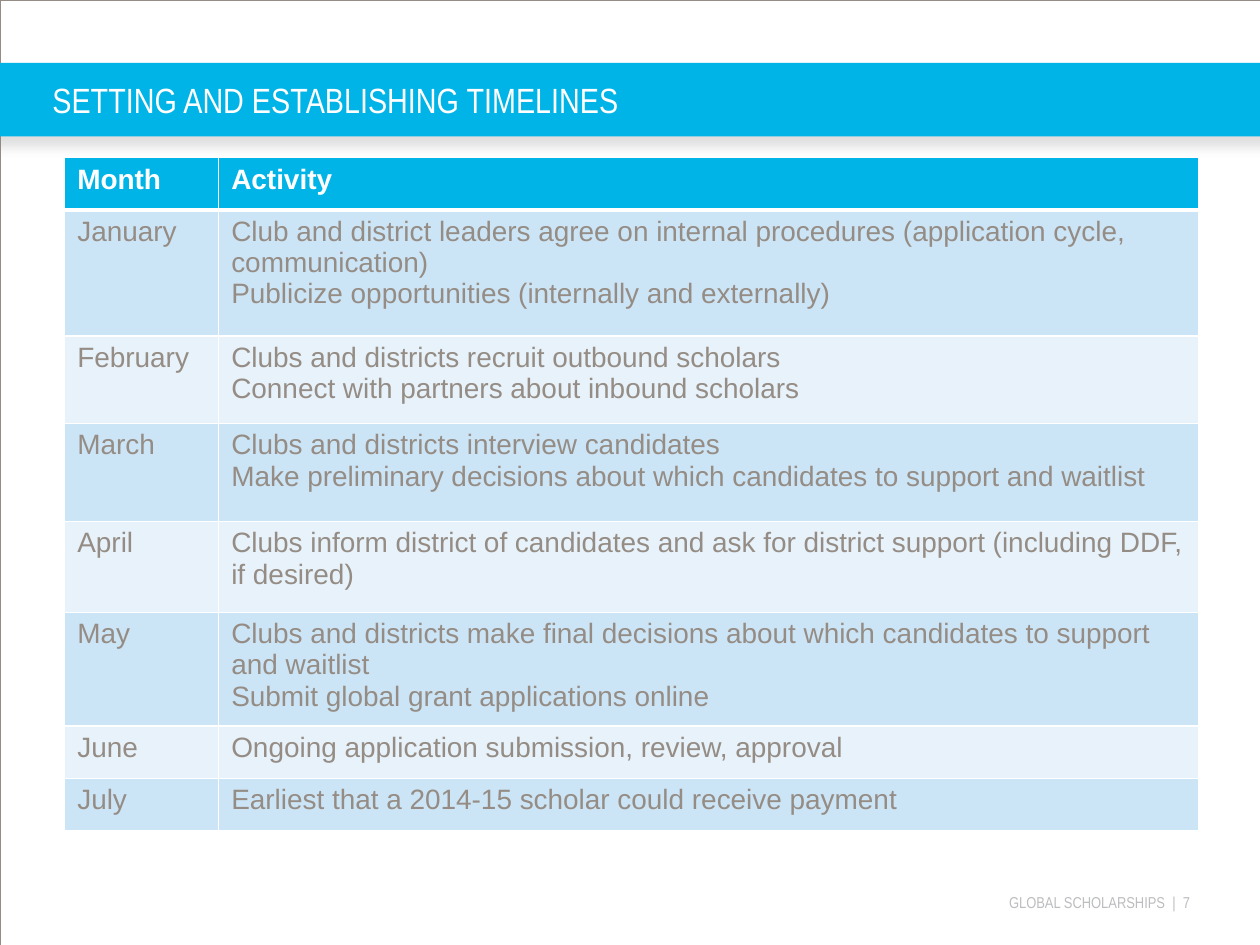
import pptx
import pptx.util
import pptx.dml.color
import pptx.enum.shapes
import pptx.enum.text
import pptx.oxml
import pptx.oxml.ns

Pt = pptx.util.Pt
BLUE, WHITE, GRAY = "01B4E7", "FFFFFF", "958D85"
BANDS = ("CCE5F6", "E7F2FA")
NAMESPACE = pptx.oxml.ns.nsdecls("a")


def color(value):
    return pptx.dml.color.RGBColor.from_string(value)


def add_text(paragraph, text, font, size, value, bold=False):
    run = paragraph.add_run()
    run.text = text
    run.font.name = font
    run.font.size = Pt(size)
    run.font.bold = bold
    run.font.color.rgb = color(value)


presentation = pptx.Presentation()
presentation.slide_width = Pt(720)
presentation.slide_height = Pt(540)
slide = presentation.slides.add_slide(presentation.slide_layouts[6])
rectangle = pptx.enum.shapes.MSO_SHAPE.RECTANGLE

frame = slide.shapes.add_shape(rectangle, Pt(0), Pt(0), Pt(720), Pt(540))
frame.shadow.inherit = False
frame.fill.background()
frame.line.color.rgb = color(GRAY)
frame.line.width = Pt(0.13)

band = slide.shapes.add_shape(rectangle, Pt(-6), Pt(36), Pt(732), Pt(42))
band.shadow.inherit = False
band.fill.solid()
band.fill.fore_color.rgb = color(BLUE)
band.line.fill.background()
effects = band._element.spPr.find(pptx.oxml.ns.qn("a:effectLst"))
effects.append(pptx.oxml.parse_xml(
    f'<a:outerShdw {NAMESPACE} blurRad="{Pt(7)}" dist="{Pt(4.8)}" dir="5400000" rotWithShape="0">'
    '<a:srgbClr val="808080"><a:alpha val="25000"/></a:srgbClr></a:outerShdw>'))

labels = [
    ("SETTING AND ESTABLISHING TIMELINES", 30, 36, 690, 42, 0, 20, WHITE, "LEFT", "MIDDLE"),
    ("GLOBAL SCHOLARSHIPS  |  7", 432, 510, 252, 11, 4, 9, "BCBDC0", "RIGHT", "TOP"),
]
for text, left, top, width, height, inset, size, value, alignment, anchor in labels:
    box = slide.shapes.add_textbox(Pt(left), Pt(top), Pt(width), Pt(height))
    text_frame = box.text_frame
    text_frame.word_wrap = True
    text_frame.margin_left = text_frame.margin_top = text_frame.margin_bottom = 0
    text_frame.margin_right = Pt(inset)
    text_frame.vertical_anchor = pptx.enum.text.MSO_ANCHOR[anchor]
    paragraph = text_frame.paragraphs[0]
    paragraph.alignment = pptx.enum.text.PP_ALIGN[alignment]
    add_text(paragraph, text, "Arial Narrow", size, value)

timeline = [
    (30, "Month", ["Activity"]),
    (72, "January", [
        "Club and district leaders agree on internal procedures (application cycle, communication)",
        "Publicize opportunities (internally and externally)"]),
    (50, "February", [
        "Clubs and districts recruit outbound scholars",
        "Connect with partners about inbound scholars"]),
    (56, "March", [
        "Clubs and districts interview candidates",
        "Make preliminary decisions about which candidates to support and waitlist"]),
    (52, "April", [
        "Clubs inform district of candidates and ask for district support (including DDF, if desired)"]),
    (56, "May", [
        "Clubs and districts make final decisions about which candidates to support and waitlist",
        "Submit global grant applications online"]),
    (30, "June", ["Ongoing application submission, review, approval"]),
    (30, "July", ["Earliest that a 2014-15 scholar could receive payment"]),
]
total_height = sum(height for height, month, activities in timeline)
table = slide.shapes.add_table(
    len(timeline), 2, Pt(37), Pt(90), Pt(648), Pt(total_height)).table
table.columns[0].width = Pt(88)
table.columns[1].width = Pt(560)

for row_index, (height, month, activities) in enumerate(timeline):
    table.rows[row_index].height = Pt(height)
    header = row_index == 0
    for column_index, lines in enumerate(([month], activities)):
        cell = table.cell(row_index, column_index)
        for line_index, line in enumerate(lines):
            text_frame = cell.text_frame
            paragraph = text_frame.add_paragraph() if line_index else text_frame.paragraphs[0]
            add_text(paragraph, line, "Arial", 16, WHITE if header else GRAY, header)
        properties = cell._tc.get_or_add_tcPr()
        for side in ("lnL", "lnR", "lnT", "lnB"):
            thick = (header and side == "lnB") or (row_index == 1 and side == "lnT")
            properties.append(pptx.oxml.parse_xml(
                f'<a:{side} {NAMESPACE} w="{Pt(3 if thick else 1)}"><a:solidFill>'
                f'<a:srgbClr val="{WHITE}"/></a:solidFill></a:{side}>'))
        cell.fill.solid()
        cell.fill.fore_color.rgb = color(BLUE if header else BANDS[(row_index - 1) % 2])

presentation.save("out.pptx")
